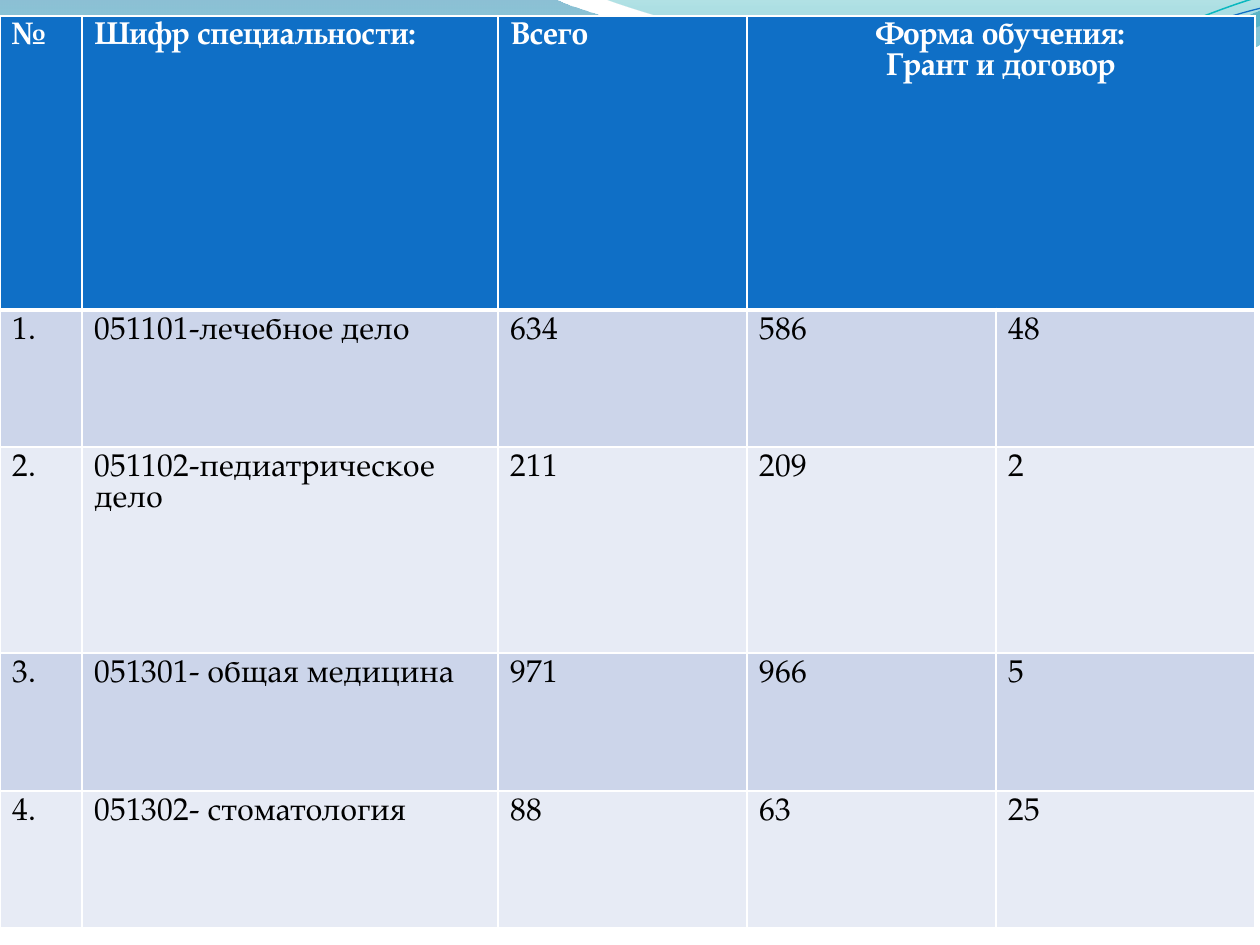
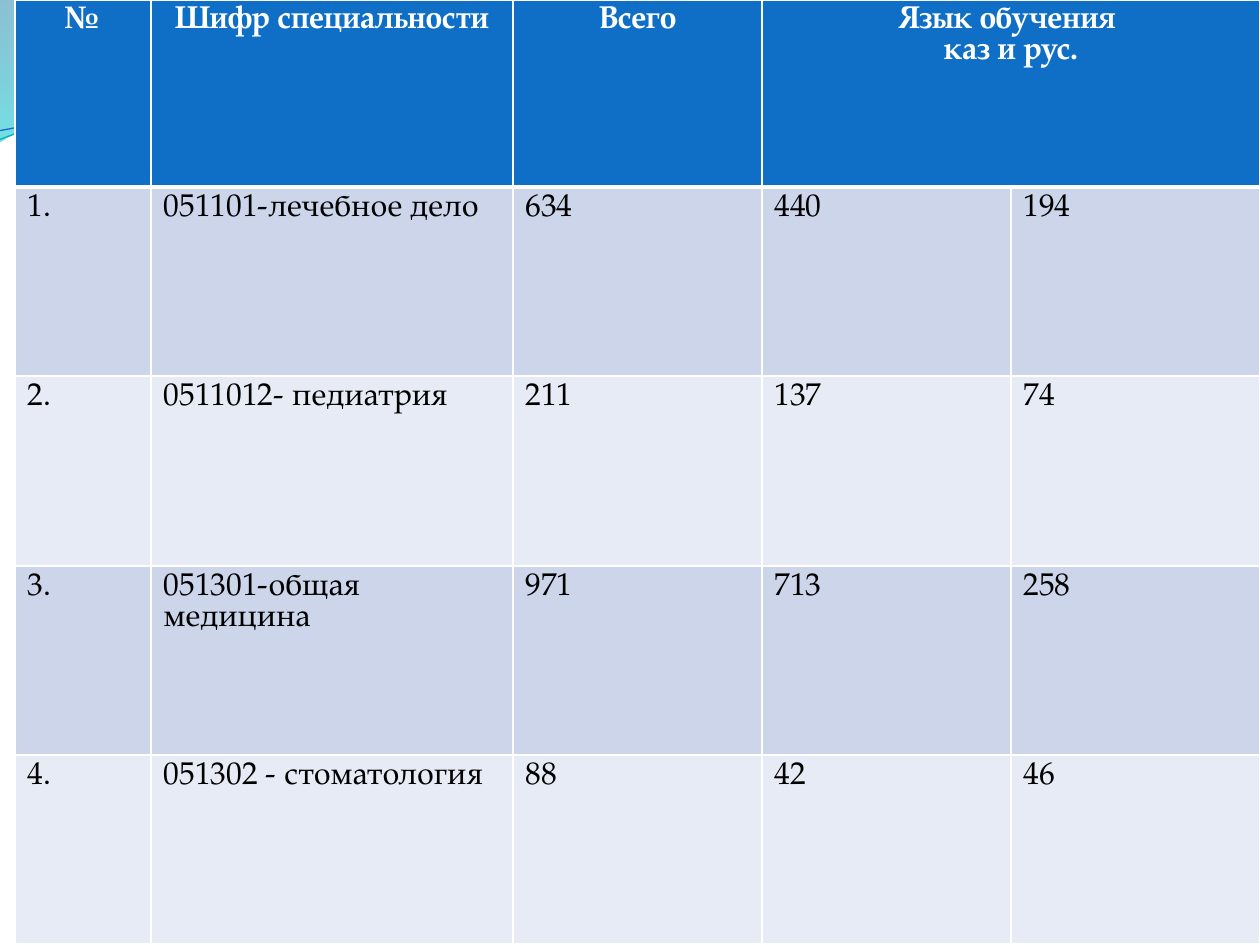
"""Build two slides of student numbers by speciality."""
from lxml import etree
from pptx import Presentation
from pptx import util as u
from pptx.dml.color import RGBColor
from pptx.enum import text
from pptx.oxml.ns import qn

PX = 914400 / 126
FONT = "TeX Gyre Pagella"
STRAND_TURN = 357.3
COLORS = {
    "header": "0F6FC6", "odd": "CCD5EA", "even": "E7EBF5",
    "white": "FFFFFF", "black": "000000",
    "deep": "0074A1", "cyan": "00C6CF", "teal": "00A1A9", "sky": "008BBF",
    "aqua": "0AB8BF",
}
WAVES = [
    ([(0, 0), (554, -1), (600, 21, 837, 79, 955, 79),
      (1075, 79, 1207, 33, 1260, 11), (1261, 45),
      (1239, 55, 1096, 96, 940, 94), (781, 94, 481, 35, 324, 43),
      (163, 45, 58, 105, -1, 142)],
     [(0, "deep", 45), (1, "cyan", 55)]),
    ([(604, -1), (641, 14, 859, 78, 969, 82),
      (1079, 87, 1211, 40, 1260, 26), (1260, 0)],
     [(0, "teal", 30), (0.8, "sky", 45)]),
]
STRANDS = [
    ([(-3, 110), (58, 90, 199, 52, 349, 53), (499, 53, 745, 118, 897, 114),
      (1049, 109, 1184, 45, 1261, 27)], "aqua", 0.85),
    ([(-3, 101), (57, 94, 207, 57, 357, 58), (508, 58, 751, 112, 902, 107),
      (1053, 104, 1188, 52, 1263, 38)], "header", 0.75),
]
FORM_ROWS = [
    ["№", "Шифр специальности:", "Всего", "Форма обучения:\nГрант и договор", ""],
    ["1.", "051101-лечебное дело", "634", "586", "48"],
    ["2.", "051102-педиатрическое дело", "211", "209", "2"],
    ["3.", "051301- общая медицина", "971", "966", "5"],
    ["4.", "051302- стоматология", "88", "63", "25"],
]
LANGUAGE_ROWS = [
    ["№", "Шифр специальности", "Всего", "Язык обучения \nказ и рус.", ""],
    ["1.", "051101-лечебное дело", "634", "440", "194"],
    ["2.", "0511012- педиатрия", "211", "137", "74"],
    ["3.", "051301-общая медицина", "971", "713", "258"],
    ["4.", "051302 - стоматология", "88", "42", "46"],
]


def px(n):
    """Turn px into EMU."""
    return u.Emu(round(n * PX))


def rgb(name):
    """Look up a colour by name."""
    return RGBColor.from_string(COLORS[name])


def add_outline(slide, segments, close):
    """Draw a freeform of lines (two numbers) and Bezier curves (six)."""
    points = [(px(seg[i]), px(seg[i + 1]))
              for seg in segments for i in range(0, len(seg), 2)]
    builder = slide.shapes.build_freeform(*points[0])
    builder.add_line_segments(points[1:], close=close)
    sp = builder.convert_to_shape()
    sp.shadow.inherit = False
    lines = iter(list(sp._element.spPr.iter(qn("a:lnTo"))))
    for seg in segments[1:]:
        first = next(lines)
        if len(seg) == 6:
            first.tag = qn("a:cubicBezTo")
            for line in (next(lines), next(lines)):
                first.append(line[0])
                line.getparent().remove(line)
    return sp


def add_wave(slide, segments, stops):
    """Add a band with a translucent vertical gradient."""
    sp = add_outline(slide, segments, True)
    sp.fill.gradient()
    sp.fill.gradient_angle = 270
    for stop, (position, color, _) in zip(sp.fill.gradient_stops, stops):
        stop.position = position
        stop.color.rgb = rgb(color)
    for clr, (_, _, alpha) in zip(sp._element.spPr.iter(qn("a:srgbClr")), stops):
        etree.SubElement(clr, qn("a:alpha"), val=str(alpha * 1000))
    sp.line.fill.background()


def add_strand(slide, segments, color, width):
    """Add a thin, slightly turned curved line."""
    sp = add_outline(slide, segments, False)
    sp.rotation = STRAND_TURN
    sp.fill.background()
    sp.line.color.rgb = rgb(color)
    sp.line.width = u.Pt(width)


def add_background(slide):
    """Add the waves shared by all slides."""
    for wave in WAVES:
        add_wave(slide, *wave)
    for strand in STRANDS:
        add_strand(slide, *strand)


def set_borders(cell, top, bottom):
    """Give a cell white borders, with top and bottom widths in points."""
    tc_pr = cell._tc.get_or_add_tcPr()
    for side, width in (("L", 1), ("R", 1), ("T", top), ("B", bottom)):
        ln = etree.SubElement(tc_pr, qn(f"a:ln{side}"), w=str(u.Pt(width)))
        fill = etree.SubElement(ln, qn("a:solidFill"))
        etree.SubElement(fill, qn("a:srgbClr"), val=COLORS["white"])


def style_cell(cell, row, centred):
    """Format a cell according to its row."""
    header = row == 0
    set_borders(cell, 3 if row == 1 else 1, 3 if header else 1)
    cell.fill.solid()
    cell.fill.fore_color.rgb = rgb("header" if header else "odd" if row % 2 else "even")
    for p in cell.text_frame.paragraphs:
        p.alignment = text.PP_ALIGN.CENTER if centred else text.PP_ALIGN.LEFT
        for font in (p.font, *(r.font for r in p.runs)):
            font.name = FONT
            font.size = u.Pt(18)
            font.bold = header
            font.color.rgb = rgb("white" if header else "black")


def add_student_table(slide, left, top, widths, heights, rows, centred_from):
    """Add a table whose header is centred from the given column on."""
    frame = slide.shapes.add_table(len(rows), len(widths), px(left), px(top),
                                   px(sum(widths)), px(sum(heights)))
    table = frame.table
    for column, width in zip(table.columns, widths):
        column.width = px(width)
    for row, height in zip(table.rows, heights):
        row.height = px(height)
    for i, values in enumerate(rows):
        for j, value in enumerate(values):
            cell = table.cell(i, j)
            cell.text = value
            style_cell(cell, i, i == 0 and j >= centred_from)
    table.cell(0, 3).merge(table.cell(0, 4))


def main():
    """Build and save the slides."""
    prs = Presentation()
    prs.slide_width, prs.slide_height = px(1260), px(945)
    tables = [
        (0, 16, [82, 416, 249, 249, 259], [294, 137, 206, 138, 137], FORM_ROWS, 3),
        (15, 0, [136, 362, 249, 249, 249], [187, 189, 190, 189, 189], LANGUAGE_ROWS, 0),
    ]
    for table in tables:
        s = prs.slides.add_slide(prs.slide_layouts[6])
        add_background(s)
        add_student_table(s, *table)
    prs.save("out.pptx")


if __name__ == "__main__":
    main()
